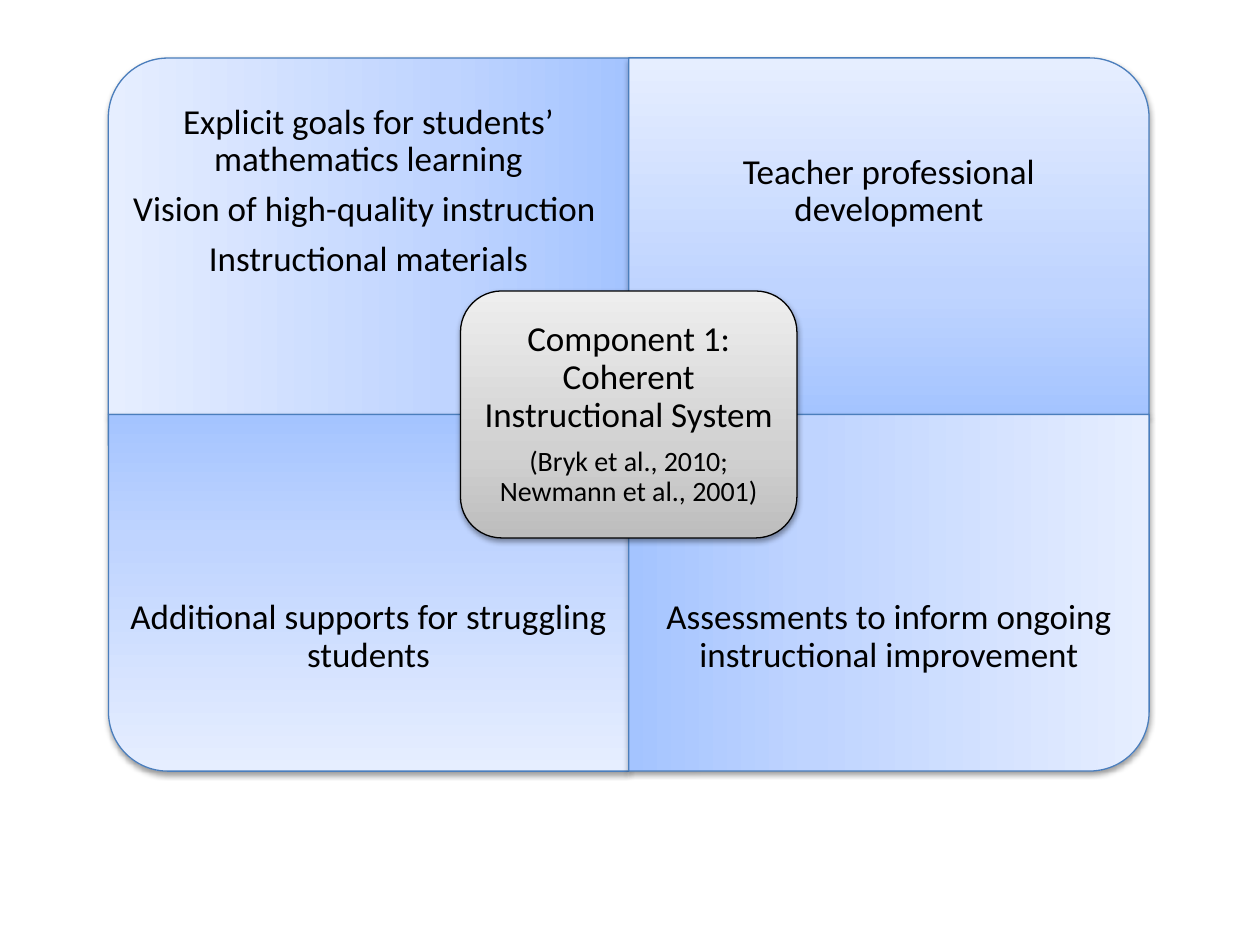
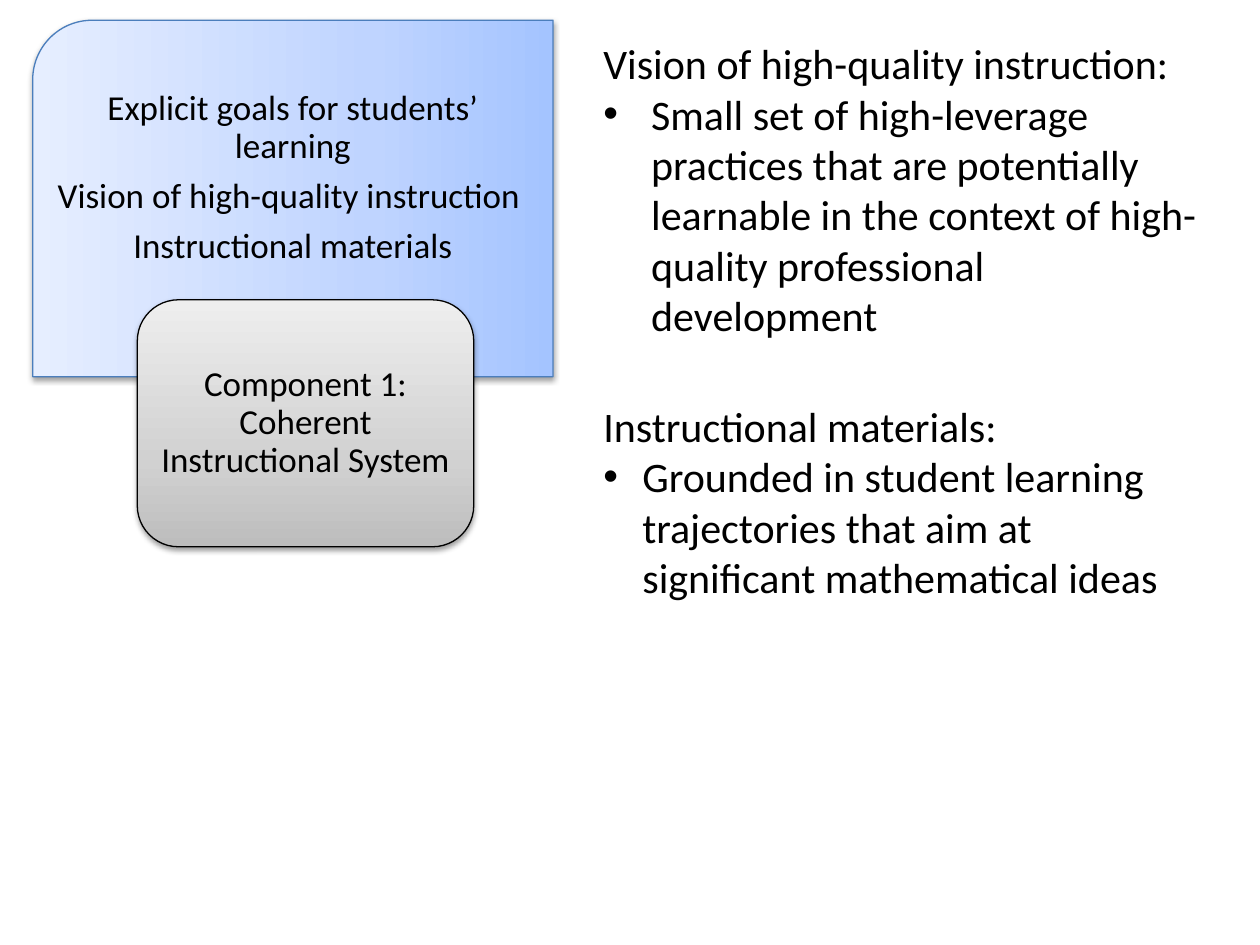
from pptx import Presentation
from pptx import util as u
from pptx.dml.color import RGBColor
from pptx.enum import shapes, text
from pptx.oxml import parse_xml
from pptx.oxml.ns import nsdecls

FONT = "Calibri"
BLACK = RGBColor(0x00, 0x00, 0x00)
EDGE = RGBColor(0x4B, 0x7E, 0xBC)
BLUE = [RGBColor(0xA4, 0xC4, 0xFF), RGBColor(0xBF, 0xD4, 0xFF), RGBColor(0xE6, 0xEE, 0xFF)]
GREY = [RGBColor(0xBD, 0xBD, 0xBD), RGBColor(0xD1, 0xD1, 0xD1), RGBColor(0xEE, 0xEE, 0xEE)]
STOPS = (0, 35, 100)

VISION = "Vision of high-quality instruction "
MATERIALS = "Instructional materials"
CORE = ("Component 1: Coherent Instructional System", 20)
CITE = ("(Bryk et al., 2010; Newmann et al., 2001)", 16)
PARTS = [
    (0, 0, 270, ["Explicit goals for students’ mathematics learning", VISION, MATERIALS]),
    (1, 0, 0, ["Teacher professional development"]),
    (0, 1, 180, ["Additional supports for struggling students"]),
    (1, 1, 90, ["Assessments to inform ongoing instructional improvement"]),
]
GOALS = ["Explicit goals for students’ learning", VISION, MATERIALS]
NOTES = [
    (0.25, 2.52, 0.38, "Vision of high-quality instruction:",
     "Small set of high-leverage practices that are potentially learnable "
     "in the context of high-quality professional development"),
    (3.13, 1.72, 0.31, "Instructional materials:",
     "Grounded in student learning trajectories that aim at significant mathematical ideas"),
]

CELL_W, CELL_H = 4.13, 2.83
LABEL_H = CELL_H * 0.75
CORE_W, CORE_H = 2.67, 1.96
GRID_X, GRID_Y = 0.86, 0.46


def add_panel(slide, kind, x, y, w, h, tones, edge, turn=0):
    if turn % 180:
        x, y, w, h = x + (w - h) / 2, y + (h - w) / 2, h, w
    panel = slide.shapes.add_shape(kind, *map(u.Inches, (x, y, w, h)))
    panel.rotation = turn
    panel.line.color.rgb = edge
    panel.line.width = u.Pt(0.75)
    stops = "".join(f'<a:gs pos="{pos * 1000}"><a:srgbClr val="{tone}"/></a:gs>'
                    for pos, tone in zip(STOPS, tones))
    props = panel._element.spPr
    props.insert(2, parse_xml(
        f'<a:gradFill {nsdecls("a")} rotWithShape="1"><a:gsLst>{stops}</a:gsLst>'
        '<a:lin ang="16200000" scaled="0"/></a:gradFill>'))
    props.append(parse_xml(
        f'<a:effectLst {nsdecls("a")}><a:outerShdw blurRad="40000" dist="20000" '
        f'dir="5400000" rotWithShape="0"><a:srgbClr val="{BLACK}">'
        '<a:alpha val="38000"/></a:srgbClr></a:outerShdw></a:effectLst>'))


def add_box(slide, x, y, w, h):
    box = slide.shapes.add_textbox(*map(u.Inches, (x, y, w, h)))
    box.text_frame.word_wrap = True
    return box.text_frame


def add_paras(frame, lines):
    frame.text = "\n".join(line for line, size in lines)
    for para, (line, size) in zip(frame.paragraphs, lines):
        para.font.name = FONT
        para.font.size = u.Pt(size)
        para.font.color.rgb = BLACK
    return frame.paragraphs


def add_label(slide, x, y, w, h, inset, lines):
    frame = add_box(slide, x, y, w, h)
    frame.vertical_anchor = text.MSO_ANCHOR.MIDDLE
    frame.margin_left = frame.margin_right = u.Inches(inset)
    frame.margin_top = frame.margin_bottom = u.Inches(inset)
    for para, (line, size) in zip(add_paras(frame, lines), lines):
        para.alignment = text.PP_ALIGN.CENTER
        para.line_spacing = 0.9
        para.space_after = u.Pt(0.35 * size)


def add_card(slide, x, y, turn):
    add_panel(slide, shapes.MSO_SHAPE.ROUND_1_RECTANGLE,
              x, y, CELL_W, CELL_H, BLUE, EDGE, turn)


def add_points(slide, x, y, lines):
    add_label(slide, x, y, CELL_W, LABEL_H, 0.16, [(line, 20) for line in lines])


def add_core(slide, x, y, lines):
    gap = 0.1
    add_panel(slide, shapes.MSO_SHAPE.ROUNDED_RECTANGLE, x, y, CORE_W, CORE_H, GREY, BLACK)
    add_label(slide, x + gap, y + gap, CORE_W - 2 * gap, CORE_H - 2 * gap, 0.08, lines)


def add_note(slide, y, h, indent, head, point):
    frame = add_box(slide, 4.69, y, 5, h)
    frame.auto_size = text.MSO_AUTO_SIZE.SHAPE_TO_FIT_TEXT
    frame.text = f"{head}\n{point}"
    props = frame.paragraphs[1]._p.get_or_add_pPr()
    props.set("marL", str(u.Inches(indent)))
    props.set("indent", str(-u.Inches(indent)))
    props.append(parse_xml(f'<a:buFont {nsdecls("a")} typeface="Arial"/>'))
    props.append(parse_xml(f'<a:buChar {nsdecls("a")} char="•"/>'))
    for para in frame.paragraphs:
        para.font.name = FONT
        para.font.size = u.Pt(24)
        para.font.color.rgb = BLACK


def draw_system(slide):
    for col, row, turn, lines in PARTS:
        x, y = GRID_X + col * CELL_W, GRID_Y + row * CELL_H
        add_card(slide, x, y, turn)
        add_points(slide, x, y + row * (CELL_H - LABEL_H), lines)
    add_core(slide, GRID_X + CELL_W - CORE_W / 2, GRID_Y + CELL_H - CORE_H / 2, [CORE, CITE])


def draw_detail(slide):
    add_card(slide, 0.26, 0.16, 270)
    for note in NOTES:
        add_note(slide, *note)
    add_core(slide, 1.09, 2.38, [CORE])
    add_points(slide, 0.26, 0.35, GOALS)


def main():
    deck = Presentation()
    deck.slide_width, deck.slide_height = u.Inches(10), u.Inches(7.5)
    for draw in (draw_system, draw_detail):
        draw(deck.slides.add_slide(deck.slide_layouts[6]))
    deck.save("out.pptx")


if __name__ == "__main__":
    main()
